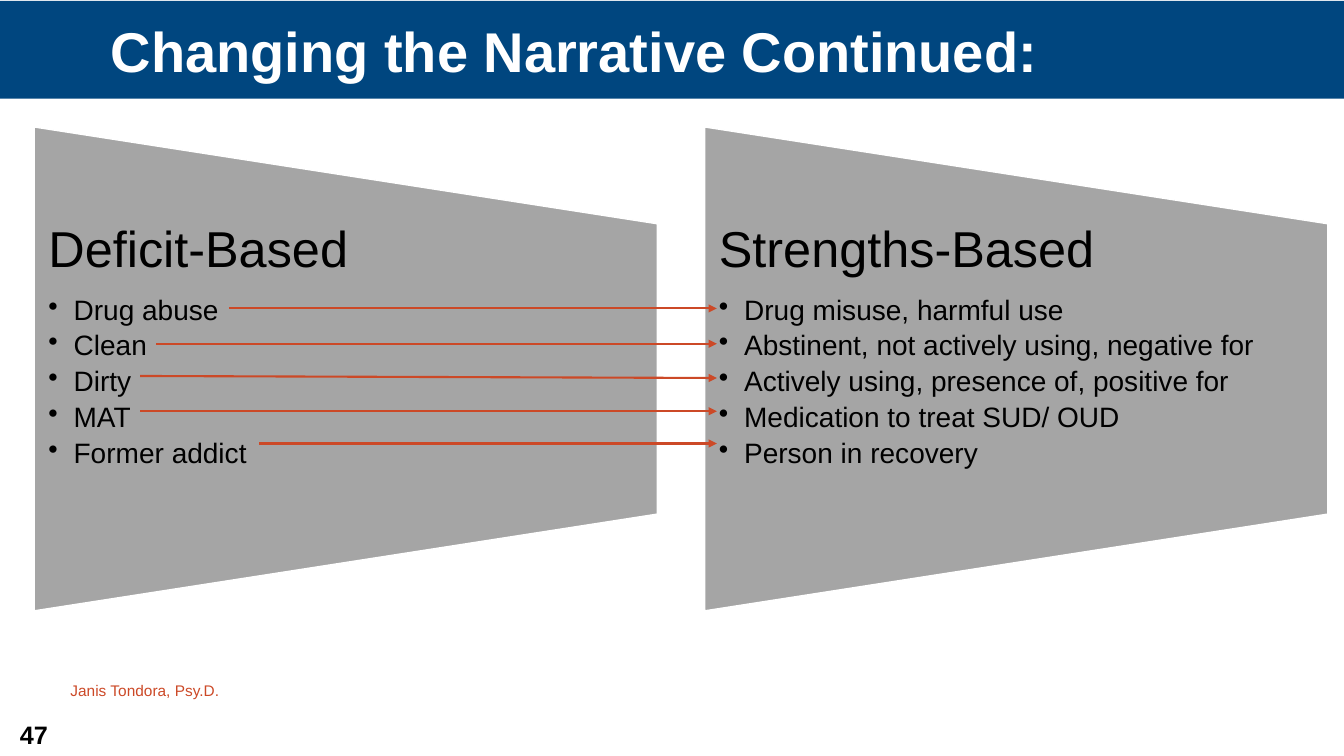
import pptx
import pptx.util
import pptx.dml.color
import pptx.enum.shapes
import pptx.enum.text
import pptx.oxml.ns
import lxml.etree
from dataclasses import dataclass

Inches = pptx.util.Inches
Pt = pptx.util.Pt
Shape = pptx.enum.shapes.MSO_SHAPE
qn = pptx.oxml.ns.qn


@dataclass(frozen=True)
class Theme:
    font: str = "Arial"
    banner: str = "00467F"
    panel: str = "A5A5A5"
    accent: str = "CC4927"
    light: str = "FFFFFF"
    dark: str = "000000"
    title: int = 40
    heading: int = 36
    body: int = 20
    number: int = 18
    credit: int = 11


THEME = Theme()
PANEL_TOP, PANEL_WIDTH, PANEL_HEIGHT = 1.26, 6.18, 4.8
PANEL_LEFT, PANEL_STEP = 0.34, 6.65
ARROW_END = 7.11
HEADINGS = ("Deficit-Based", "Strengths-Based")
ROWS = (
    ("Drug abuse", "Drug misuse, harmful use", 2.27, 3.06, 3.06),
    ("Clean", "Abstinent, not actively using, negative for", 1.55, 3.41, 3.41),
    ("Dirty", "Actively using, presence of, positive for", 1.39, 3.73, 3.75),
    ("MAT", "Medication to treat SUD/ OUD", 1.39, 4.08, 4.08),
    ("Former addict", "Person in recovery", 2.57, 4.4, 4.4),
)


def color(value):
    return pptx.dml.color.RGBColor.from_string(value)


def add_span(para, text, size, ink, bold=False):
    span = para.add_run()
    span.text = text
    span.font.name = THEME.font
    span.font.size = Pt(size)
    span.font.bold = bold
    span.font.color.rgb = color(ink)


def add_filled(page, kind, box, fill):
    shape = page.shapes.add_shape(kind, *map(Inches, box))
    shape.shadow.inherit = False
    shape.fill.solid()
    shape.fill.fore_color.rgb = color(fill)
    shape.line.fill.background()
    return shape


def add_text(page, box):
    frame = page.shapes.add_textbox(*map(Inches, box)).text_frame
    frame.word_wrap = True
    return frame


def add_bullet(para):
    properties = para._p.get_or_add_pPr()
    properties.set("marL", str(Inches(0.25)))
    properties.set("indent", str(-Inches(0.25)))
    lxml.etree.SubElement(properties, qn("a:buChar")).set("char", "•")


def add_banner(page, box):
    banner = add_filled(page, Shape.RECTANGLE, box, THEME.banner)
    frame = banner.text_frame
    frame.margin_left = Inches(1.1)
    frame.vertical_anchor = pptx.enum.text.MSO_ANCHOR.MIDDLE
    para = frame.paragraphs[0]
    para.alignment = pptx.enum.text.PP_ALIGN.LEFT
    add_span(para, "Changing the Narrative Continued:", THEME.title, THEME.light, True)


def add_panel(page, box, heading, items):
    left, top, width, height = box
    offset = (width - height) / 2
    upright = (left + offset, top - offset, height, width)
    panel = add_filled(page, Shape.FLOWCHART_MANUAL_OPERATION, upright, THEME.panel)
    panel.rotation = 270
    panel.line.color.rgb = color(THEME.light)
    panel.line.width = Pt(1)

    frame = add_text(page, (left, top + height / 5, width, height * 0.6))
    frame.margin_left = frame.margin_right = Inches(0.14)
    frame.margin_top = frame.margin_bottom = 0
    title = frame.paragraphs[0]
    title.line_spacing = 0.9
    title.space_after = Pt(12.6)
    add_span(title, heading, THEME.heading, THEME.dark)
    for item in items:
        para = frame.add_paragraph()
        para.line_spacing = 0.9
        para.space_after = Pt(4)
        add_bullet(para)
        add_span(para, item, THEME.body, THEME.dark)


def add_arrow(page, start, end):
    arrow = page.shapes.add_connector(
        pptx.enum.shapes.MSO_CONNECTOR.STRAIGHT, *map(Inches, start + end))
    arrow.line.color.rgb = color(THEME.accent)
    arrow.line.width = Pt(1.5)
    line = arrow.line._get_or_add_ln()
    lxml.etree.SubElement(line, qn("a:tailEnd")).set("type", "triangle")
    lxml.etree.SubElement(arrow._element.spPr, qn("a:effectLst"))


def add_label(page, box, text, size, ink, bold=False):
    add_span(add_text(page, box).paragraphs[0], text, size, ink, bold)


def build_comparison(page):
    add_label(page, (0.1, 7.09, 0.54, 0.4), "47", THEME.number, THEME.dark, True)
    add_banner(page, (0, 0.01, 13.4, 0.97))
    for column, heading in enumerate(HEADINGS):
        box = (PANEL_LEFT + column * PANEL_STEP, PANEL_TOP, PANEL_WIDTH, PANEL_HEIGHT)
        add_panel(page, box, heading, [row[column] for row in ROWS])
    for _, _, start, start_top, end_top in ROWS:
        add_arrow(page, (start, start_top), (ARROW_END, end_top))
    add_label(page, (0.6, 6.71, 2.42, 0.29), "Janis Tondora, Psy.D.",
              THEME.credit, THEME.accent)


def main():
    deck = pptx.Presentation()
    deck.slide_width, deck.slide_height = Inches(13.33), Inches(7.5)
    build_comparison(deck.slides.add_slide(deck.slide_layouts[6]))
    deck.save("out.pptx")


if __name__ == "__main__":
    main()
